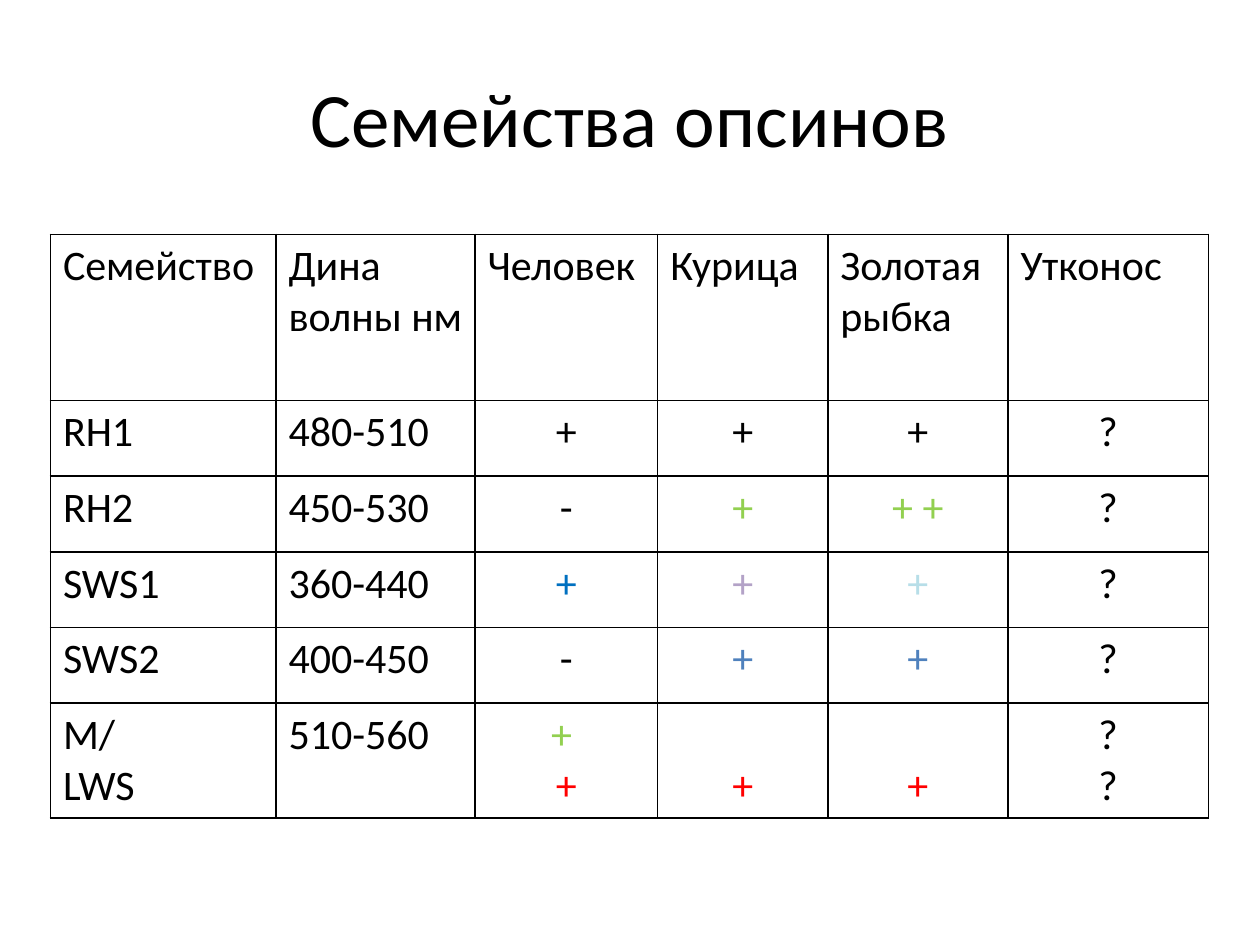
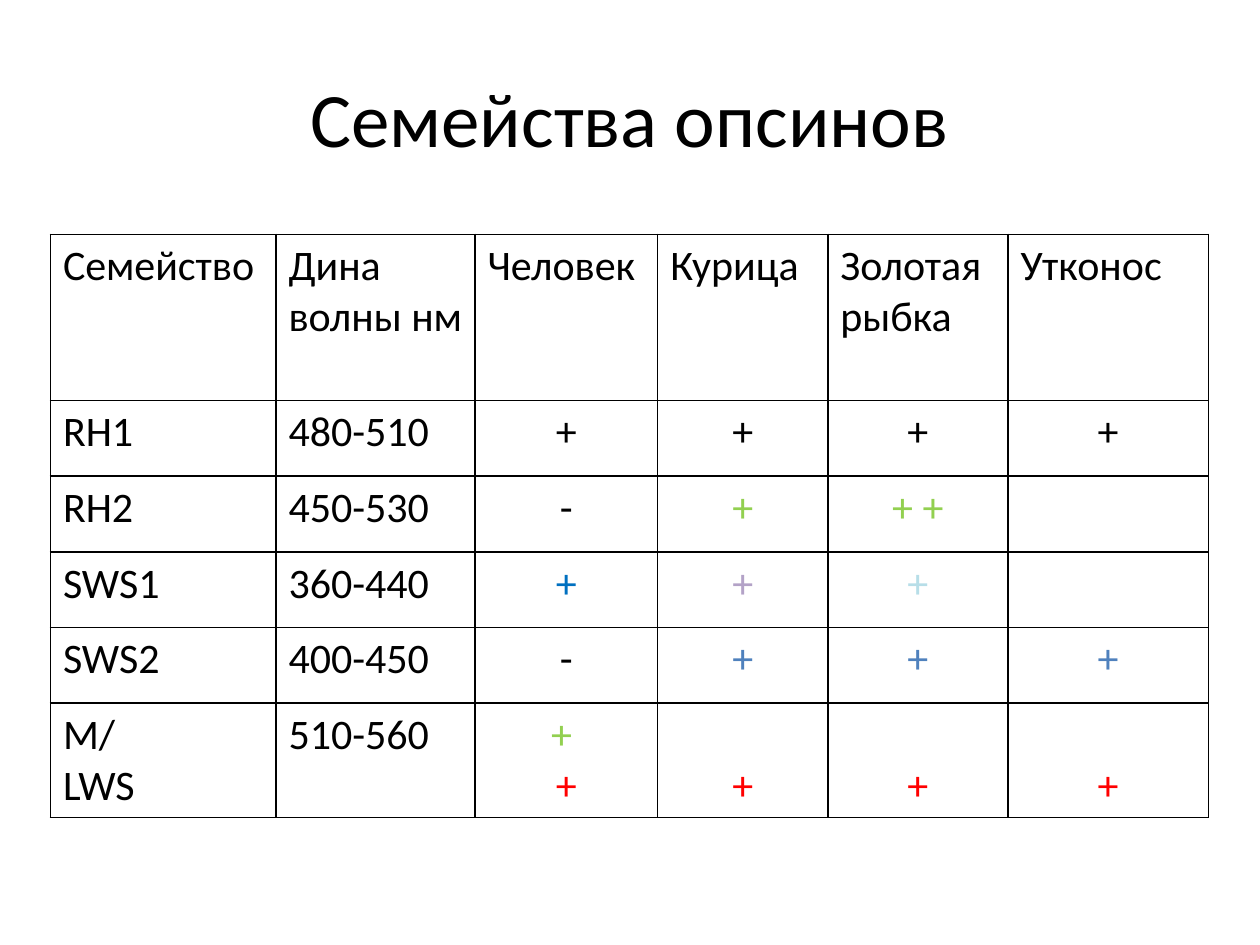
from lxml.etree import SubElement as Sub
from pptx import Presentation
from pptx.dml.color import RGBColor as Rgb
from pptx.enum.text import MSO_ANCHOR as Anchor, PP_ALIGN as Align
from pptx.oxml.ns import qn
from pptx.util import Inches, Pt

# Shared style
FONT = "Calibri"
BLACK = Rgb(0x00, 0x00, 0x00)
GREEN = Rgb(0x92, 0xD0, 0x50)
BLUE = Rgb(0x00, 0x70, 0xC0)
STEEL = Rgb(0x4F, 0x81, 0xBD)
LILAC = Rgb(0xB3, 0xA2, 0xC7)
AQUA = Rgb(0xB7, 0xDE, 0xE8)
RED = Rgb(0xFF, 0x00, 0x00)

# Table grid
COLS = [1.79, 1.58, 1.45, 1.35, 1.43, 1.59]
ROWS = [1.32] + [0.6] * 4 + [0.91]

# A mark is a list of (text, colour) lines
YES = [("+", BLACK)]
NO = [("-", BLACK)]
ASK = [("?", BLACK)]
MID = [("+", STEEL)]
LONG = [("+", RED)]

HEAD = ["Семейство", "Дина волны нм", "Человек", "Курица",
        "Золотая рыбка", "Утконос"]
OPSINS = [
    ("RH1", "480-510", YES, YES, YES),
    ("RH2", "450-530", NO, [("+", GREEN)], [("+ +", GREEN)]),
    ("SWS1", "360-440", [("+", BLUE)], [("+", LILAC)], [("+", AQUA)]),
    ("SWS2", "400-450", NO, MID, MID),
    ("M/\vLWS", "510-560", [("+ ", GREEN), ("+", RED)], LONG, LONG),
]

# Last column of each slide: the question, then the answer
GUESS = [ASK] * 4 + [ASK * 2]
ANSWER = [YES, [], [], MID, LONG]


def style(par, size, color, align):
    par.alignment = align
    for run in par.runs:
        run.font.name = FONT
        run.font.size = Pt(size)
        run.font.color.rgb = color


def add_title(slide, text):
    box = slide.shapes.add_textbox(Inches(0.5), Inches(0.3),
                                   Inches(9), Inches(1.25))
    frame = box.text_frame
    frame.word_wrap = True
    frame.vertical_anchor = Anchor.MIDDLE
    frame.text = text
    style(frame.paragraphs[0], 44, BLACK, Align.CENTER)


def set_edges(cell):
    props = cell._tc.get_or_add_tcPr()
    for side in ("lnL", "lnR", "lnT", "lnB"):
        line = Sub(props, qn("a:" + side), w=str(Pt(1)))
        fill = Sub(line, qn("a:solidFill"))
        Sub(fill, qn("a:srgbClr"), val=str(BLACK))


def fill_cell(cell, lines, align):
    set_edges(cell)
    cell.fill.background()
    frame = cell.text_frame
    for i, (text, color) in enumerate(lines):
        par = frame.add_paragraph() if i else frame.paragraphs[0]
        par.text = text
        style(par, 24, color, align)


def add_grid(slide, last):
    frame = slide.shapes.add_table(len(ROWS), len(COLS), Inches(0.4),
                                   Inches(1.86), Inches(sum(COLS)),
                                   Inches(sum(ROWS)))
    table = frame.table
    table.first_row = table.horz_banding = False
    for col, width in zip(table.columns, COLS):
        col.width = Inches(width)
    for row, height in zip(table.rows, ROWS):
        row.height = Inches(height)

    # Labels sit left, marks are centred
    rows = [HEAD] + [[*data, mark] for data, mark in zip(OPSINS, last)]
    for r, row in enumerate(rows):
        for c, item in enumerate(row):
            cell = table.cell(r, c)
            if isinstance(item, str):
                fill_cell(cell, [(item, BLACK)], Align.LEFT)
            else:
                fill_cell(cell, item, Align.CENTER)
            # Long-wave marks stand level with LWS
            if item is LONG:
                cell.vertical_anchor = Anchor.BOTTOM


def main():
    deck = Presentation()
    deck.slide_width = Inches(10)
    deck.slide_height = Inches(7.5)
    for last in (GUESS, ANSWER):
        slide = deck.slides.add_slide(deck.slide_layouts[6])
        add_grid(slide, last)
        add_title(slide, "Семейства опсинов")
    deck.save("out.pptx")


if __name__ == "__main__":
    main()
